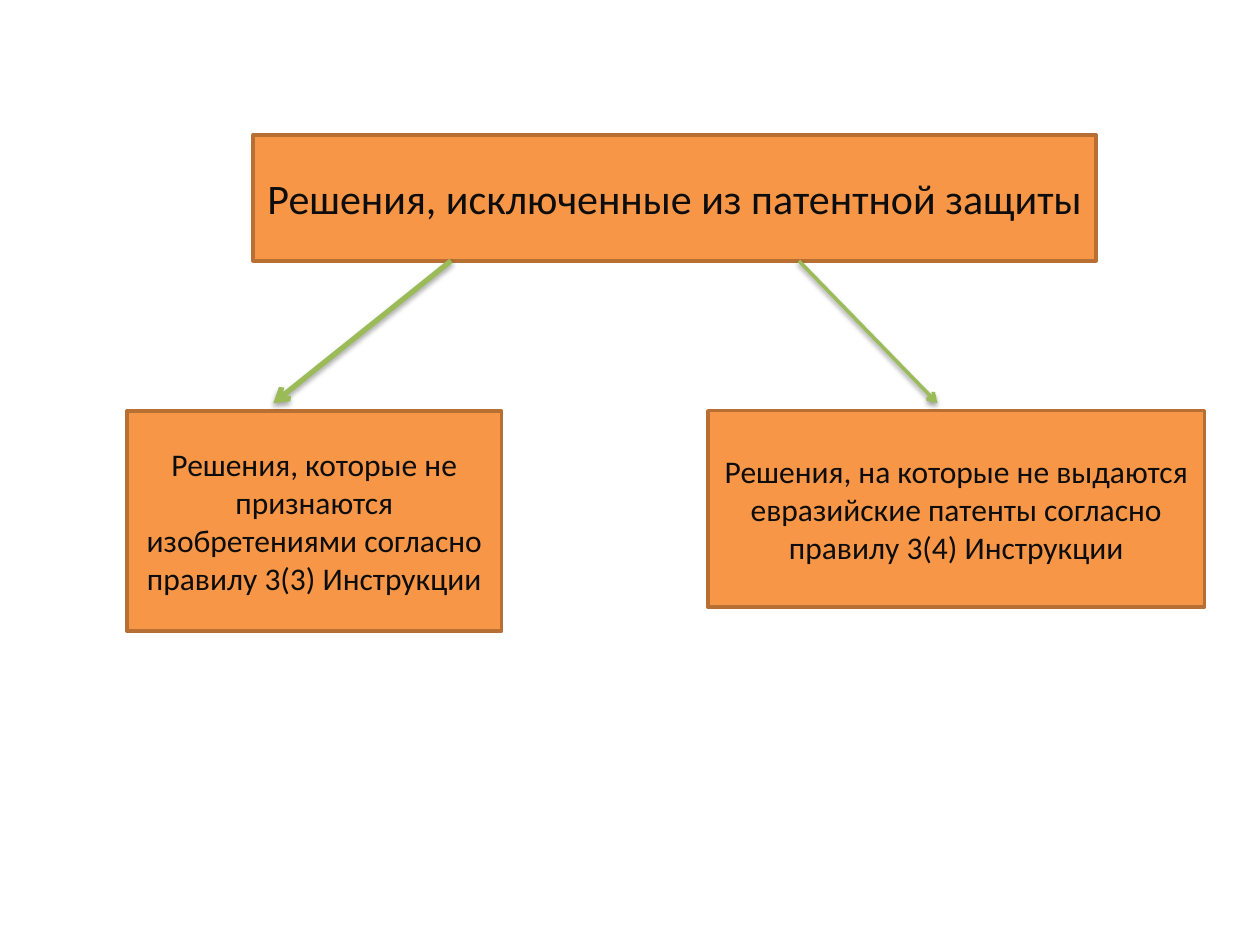
import pptx
import pptx.util
import pptx.dml.color
import pptx.enum.shapes
import pptx.enum.text
import pptx.oxml
import pptx.oxml.ns

Inches, Pt = pptx.util.Inches, pptx.util.Pt

# Content: text, (left, top, width, height) in inches, text size in points
HEADING = ("Решения, исключенные из патентной защиты", (2.01, 1.07, 6.69, 1), 24)
BRANCHES = [
    ("Решения, которые не признаются изобретениями согласно правилу 3(3) Инструкции",
     (1.01, 3.26, 2.97, 1.75), 18),
    ("Решения, на которые не выдаются евразийские патенты согласно правилу 3(4) Инструкции",
     (5.62, 3.26, 3.94, 1.56), 18),
]
# Arrows: start x, end x, line width, shadow opacity in percent, shadow distance
ARROWS = [(3.58, 2.17, 3, 35, 1.8), (6.34, 7.44, 2, 38, 1.6)]
ARROW_TOP = HEADING[1][1] + HEADING[1][3]
ARROW_BOTTOM = 3.2
SHADOW_BLUR = 3.1
COLORS = {"fill": "F79646", "border": "B76F34", "text": "0D0D0D",
          "arrow": "9BBB59", "shadow": "000000"}


def color(name):
    return pptx.dml.color.RGBColor.from_string(COLORS[name])


def format_box(box, text, place, size):
    box.left, box.top, box.width, box.height = map(Inches, place)
    box.fill.solid()
    box.fill.fore_color.rgb = color("fill")
    box.line.color.rgb = color("border")
    box.line.width = Pt(2)
    frame = box.text_frame
    frame.word_wrap = True
    frame.auto_size = pptx.enum.text.MSO_AUTO_SIZE.NONE
    frame.vertical_anchor = pptx.enum.text.MSO_ANCHOR.MIDDLE
    paragraph = frame.paragraphs[0]
    paragraph.alignment = pptx.enum.text.PP_ALIGN.CENTER
    run = paragraph.add_run()
    run.text = text
    run.font.name = "Calibri"
    run.font.size = Pt(size)
    run.font.color.rgb = color("text")


def add_arrow(slide, start_x, end_x, width, opacity, distance):
    arrow = slide.shapes.add_connector(
        pptx.enum.shapes.MSO_CONNECTOR.STRAIGHT,
        Inches(start_x), Inches(ARROW_TOP), Inches(end_x), Inches(ARROW_BOTTOM))
    arrow.line.color.rgb = color("arrow")
    arrow.line.width = Pt(width)
    namespace = pptx.oxml.ns.nsdecls("a")
    arrow.line._get_or_add_ln().append(
        pptx.oxml.parse_xml(f'<a:tailEnd {namespace} type="arrow"/>'))
    arrow._element.spPr.append(pptx.oxml.parse_xml(
        f'<a:effectLst {namespace}><a:outerShdw blurRad="{Pt(SHADOW_BLUR)}" '
        f'dist="{Pt(distance)}" dir="5400000" rotWithShape="0">'
        f'<a:srgbClr val="{COLORS["shadow"]}"><a:alpha val="{opacity * 1000}"/>'
        '</a:srgbClr></a:outerShdw></a:effectLst>'))


def main():
    deck = pptx.Presentation()
    deck.slide_width, deck.slide_height = Inches(10), Inches(7.5)
    slide = deck.slides.add_slide(deck.slide_layouts.get_by_name("Title Only"))

    # Heading
    format_box(slide.shapes.title, *HEADING)

    # Branches
    for text, place, size in BRANCHES:
        branch = slide.shapes.add_shape(
            pptx.enum.shapes.MSO_SHAPE.RECTANGLE, *map(Inches, place))
        branch.shadow.inherit = False
        format_box(branch, text, place, size)

    # Arrows from the heading to the branches
    for arrow in ARROWS:
        add_arrow(slide, *arrow)

    deck.save("out.pptx")


if __name__ == "__main__":
    main()
